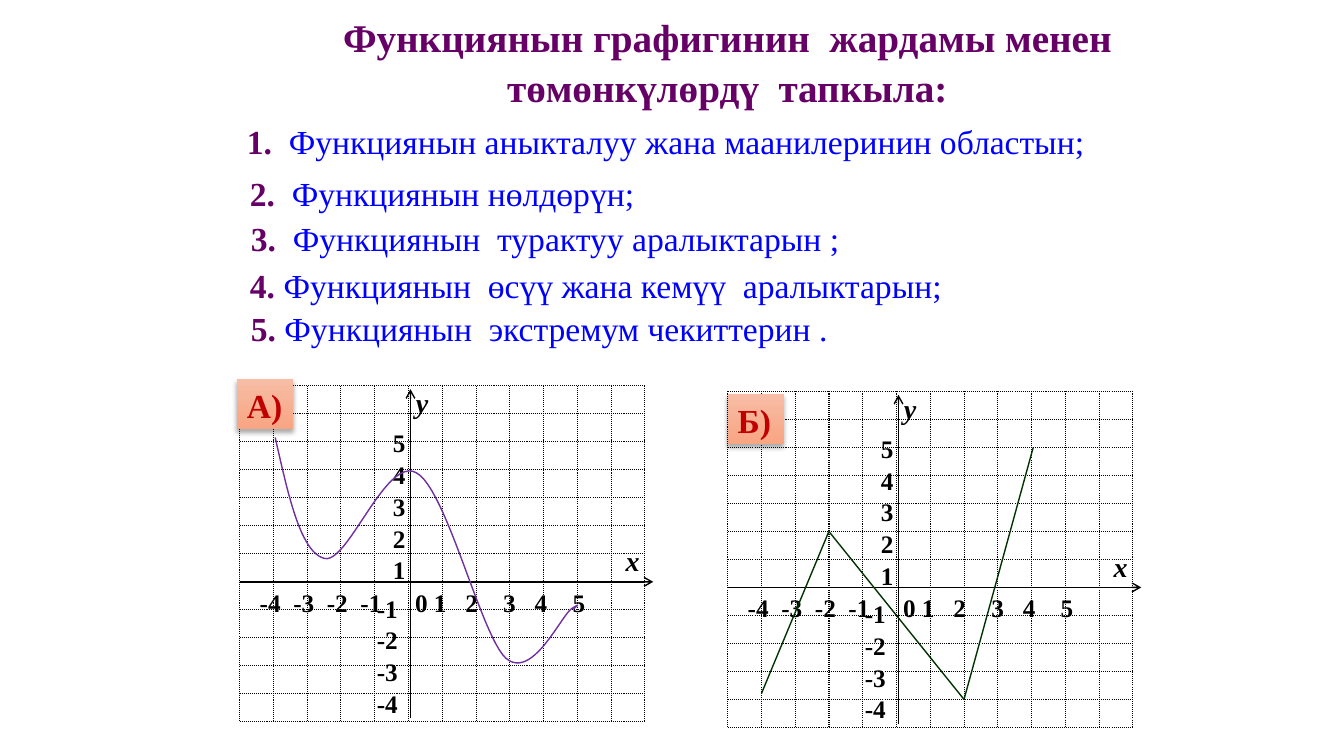
from itertools import pairwise

from lxml import etree
from pptx import Presentation
from pptx.dml.color import RGBColor
from pptx.enum.dml import MSO_LINE
from pptx.enum.shapes import MSO_CONNECTOR, MSO_SHAPE
from pptx.enum.text import MSO_ANCHOR, MSO_AUTO_SIZE, PP_ALIGN
from pptx.oxml.ns import qn
from pptx.util import Pt

STRAIGHT = MSO_CONNECTOR.STRAIGHT
RECTANGLE = MSO_SHAPE.RECTANGLE
DOTTED = MSO_LINE.ROUND_DOT
TOP, MIDDLE = MSO_ANCHOR.TOP, MSO_ANCHOR.MIDDLE
LEFT, CENTER = PP_ALIGN.LEFT, PP_ALIGN.CENTER
FONT = "Times New Roman"
BLACK, PLUM, BLUE, RED = "000000", "660066", "0000FF", "C00000"
COLUMN, ROW = 24.12, 20


def write(text, box, holder=None, size=18, color=BLACK, bold=True, italic=False,
          align=LEFT, anchor=TOP, wrap=True, spacing=1.05, tabs=(), rest=""):
    left, top, width, height = map(Pt, box)
    if holder is None:
        holder = slide.shapes.add_textbox(left, top, width, height)
    holder.left, holder.top, holder.width, holder.height = left, top, width, height
    frame = holder.text_frame
    frame.auto_size = MSO_AUTO_SIZE.NONE
    frame.word_wrap = wrap
    frame.vertical_anchor = anchor
    frame.margin_left = frame.margin_right = Pt(7.2)
    frame.margin_top = frame.margin_bottom = Pt(3.6)
    for index, line in enumerate(text.split("\n")):
        paragraph = frame.add_paragraph() if index else frame.paragraphs[0]
        paragraph.alignment = align
        paragraph.line_spacing = spacing
        if tabs:
            stops = etree.SubElement(paragraph._p.get_or_add_pPr(), qn("a:tabLst"))
            for stop in tabs:
                etree.SubElement(stops, qn("a:tab"), pos=str(Pt(stop)), algn="l")
        for words, shade, heavy in ((line, color, bold), (rest, BLUE, False)):
            if words:
                run = paragraph.add_run()
                run.text = words
                run.font.name = FONT
                run.font.size = Pt(size)
                run.font.bold = heavy
                run.font.italic = italic
                run.font.color.rgb = RGBColor.from_string(shade)


def draw_line(start, end, color=BLACK, width=1, dash=None, arrow=False):
    line = slide.shapes.add_connector(STRAIGHT, *map(Pt, (*start, *end)))
    line.line.color.rgb = RGBColor.from_string(color)
    line.line.width = Pt(width)
    if dash:
        line.line.dash_style = dash
    if arrow:
        etree.SubElement(line.line._get_or_add_ln(), qn("a:tailEnd"), type="arrow")
    etree.SubElement(line._element.spPr, qn("a:effectLst"))


presentation = Presentation()
presentation.slide_width, presentation.slide_height = Pt(960), Pt(540)
slide = presentation.slides.add_slide(presentation.slide_layouts[5])

write("Функциянын графигинин  жардамы менен төмөнкүлөрдү  тапкыла:",
      (188, 4.3, 663, 75), holder=slide.shapes.title, size=28, color=PLUM, align=CENTER)

tasks = [
    ("1.  ", "Функциянын аныкталуу жана маанилеринин областын;", 169.2, 81.4),
    ("2.  ", "Функциянын нөлдөрүн;", 171.4, 118.8),
    ("3.  ", "Функциянын  турактуу аралыктарын ;", 172.1, 150.5),
    ("4. ", "Функциянын  өсүү жана кемүү  аралыктарын;", 171.4, 184.3),
    ("5. ", "Функциянын  экстремум чекиттерин .", 172.1, 215.3),
]
for number, task, left, top in tasks:
    write(number, (left, top, 625, 36), size=24, color=PLUM, rest=task)

plots = [
    ("А)", 171.2, 275.6, 169.2, 270.7),
    ("Б)", 519.8, 279.6, 519.8, 281.5),
]
for letter, left, top, badge_left, badge_top in plots:
    right, bottom = left + 12 * COLUMN, top + 12 * ROW
    for step in range(13):
        y = top + step * ROW
        draw_line((left, y), (right, y), width=0.75, dash=DOTTED)
    for step in range(13):
        x = left + step * COLUMN
        draw_line((x, top), (x, bottom), width=0.75, dash=DOTTED)
    axis_x, axis_y = left + 122, top + 7 * ROW
    draw_line((left, axis_y), (right + 6, axis_y), arrow=True)
    draw_line((axis_x, bottom - 2.4), (axis_x, top + 2.4), arrow=True)

    write("у", (left + 118.8, top - 5, 28.8, 32), size=20, italic=True)
    write("х", (left + 268.6, top + 108, 28, 32), size=20, italic=True)
    write("5\n4\n3\n2\n1", (left + 102.4, top + 25.2, 33.8, 116.6))
    write("-1\n-2\n-3\n-4", (left + 90.9, top + 143.3, 38.2, 94.3))
    write("-4\t-3\t-2\t-1", (left + 7.2, top + 139.2, 108.7, 28.8), tabs=(24, 48, 72))
    write("0 1\t2\t3\t4\t5", (left + 118.2, top + 139.2, 200, 28.8),
          tabs=(36, 63, 85.5, 112.5))

    badge = slide.shapes.add_shape(RECTANGLE, 0, 0, 0, 0)
    badge.line.fill.background()
    badge.fill.gradient()
    badge.fill.gradient_angle = 270
    for stop, shade in zip(badge.fill.gradient_stops, ("F7BDA5", "F8A582")):
        stop.color.rgb = RGBColor.from_string(shade)
    badge.shadow.inherit = False
    effects = badge._element.spPr.find(qn("a:effectLst"))
    shadow = etree.SubElement(effects, qn("a:outerShdw"), blurRad=str(Pt(3.5)),
                              dist=str(Pt(2.2)), dir="5400000", rotWithShape="0")
    tint = etree.SubElement(shadow, qn("a:srgbClr"), val=BLACK)
    etree.SubElement(tint, qn("a:alpha"), val="32000")
    write(letter, (badge_left, badge_top, 40.3, 36), holder=badge, size=24, color=RED,
          anchor=MIDDLE, wrap=False)

curve_start = (196.6, 312.5)
curve_parts = [
    ((205.9, 353.5), (214.6, 394.6), (231.8, 398.9)),
    ((248.4, 403.2), (275.8, 325.4), (297.4, 337.7)),
    ((319, 349.2), (343.4, 453.6), (361.4, 470.2)),
    ((380.2, 486), (400.3, 440.6), (408.2, 434.9)),
    ((416.9, 429.1), (409.7, 434.9), (409.7, 434.9)),
]
curve_points = []
knot = curve_start
for first, second, last in curve_parts:
    for step in range(1, 25):
        t = step / 24
        curve_points.append(tuple(
            Pt((1 - t) ** 3 * a + 3 * t * (1 - t) ** 2 * b + 3 * t * t * (1 - t) * c + t ** 3 * d)
            for a, b, c, d in zip(knot, first, second, last)))
    knot = last
builder = slide.shapes.build_freeform(*map(Pt, curve_start))
builder.add_line_segments(curve_points, close=False)
curve = builder.convert_to_shape()
curve.fill.background()
curve.line.color.rgb = RGBColor.from_string("7030A0")
curve.line.width = Pt(1)
curve.shadow.inherit = False

zigzag = [(543.9, 495.4), (592.1, 379.6), (688.6, 499.6), (738, 319.7)]
for start, end in pairwise(zigzag):
    draw_line(start, end, color="003300")

presentation.save("out.pptx")
